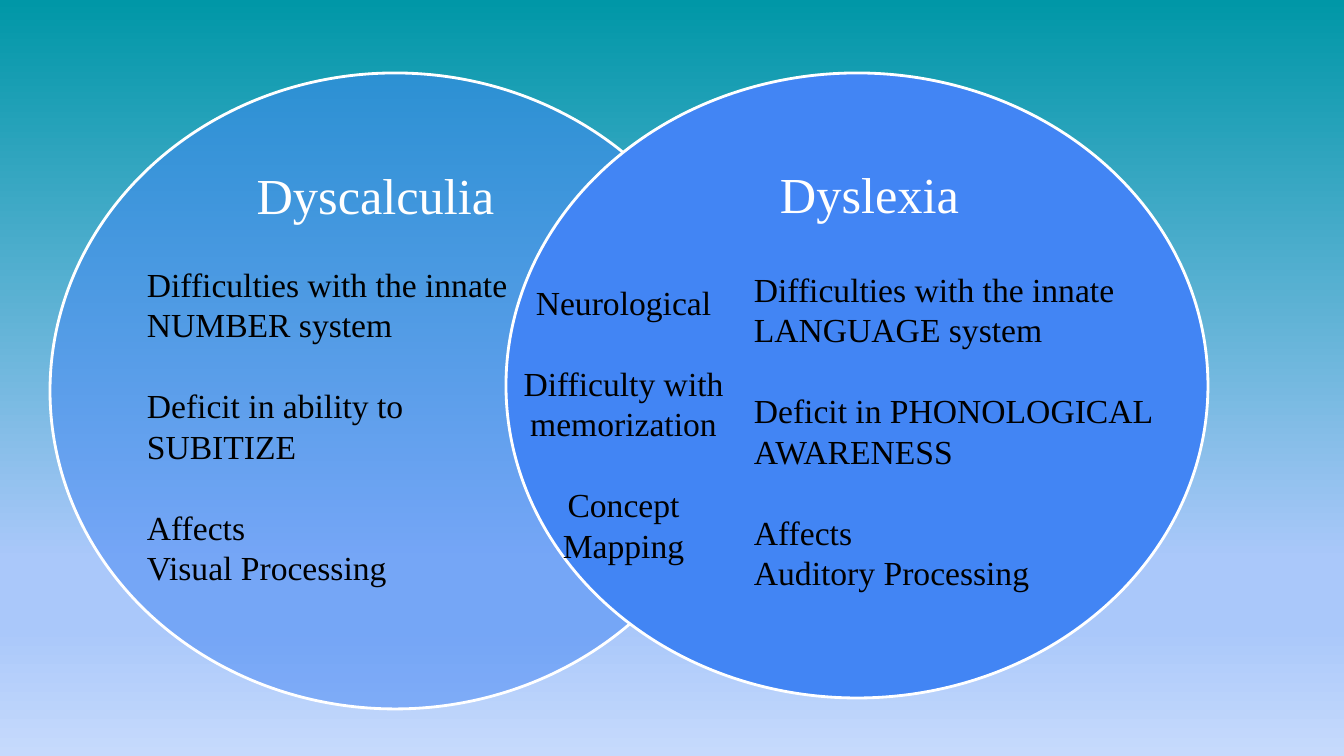
from copy import deepcopy

from pptx import Presentation
from pptx.dml.color import RGBColor
from pptx.enum.shapes import MSO_SHAPE
from pptx.enum.text import MSO_AUTO_SIZE, PP_ALIGN
from pptx.oxml.ns import qn
from pptx.util import Pt
from lxml import etree

ELLIPSE = MSO_SHAPE.OVAL
GROW = MSO_AUTO_SIZE.SHAPE_TO_FIT_TEXT
LEFT, CENTER = PP_ALIGN.LEFT, PP_ALIGN.CENTER

PX = 9144
SCALE = 914400 / 100.8
FONT = "Times New Roman"
WHITE, BLACK, BLUE = "FFFFFF", "000000", "4285F4"
LINE_GAP = 29

BACKGROUND = [(0, "0097A7"), (74, "AAC8FA"), (83, "AAC8FA"), (100, "C6DAFC")]
CIRCLES = [((50, 73, 690, 636), 50), ((506, 73, 702, 625), 100)]
HEADINGS = [
    ((245, 159, 261, 72), "Dyscalculia"),
    ((728, 158, 283, 72), "Dyslexia"),
]
LISTS = [
    ((513, 277, 221, 295), CENTER, [
        ["Neurological"],
        ["Difficulty with memorization"],
        ["Concept Mapping"],
    ]),
    ((137, 259, 399, 360), LEFT, [
        ["Difficulties with the innate NUMBER system"],
        ["Deficit in ability to SUBITIZE"],
        ["Affects", "Visual Processing"],
    ]),
    ((744, 264, 449, 336), LEFT, [
        ["Difficulties with the innate LANGUAGE system"],
        ["Deficit in PHONOLOGICAL AWARENESS"],
        ["Affects", "Auditory Processing"],
    ]),
]


def px(lengths):
    return [round(length * SCALE) for length in lengths]


def color(value):
    return RGBColor.from_string(value)


def paint_background(slide):
    fill = slide.background.fill
    fill.gradient()
    fill.gradient_angle = 270
    stop_list = next(slide.element.iter(qn("a:gsLst")))
    while len(stop_list) < len(BACKGROUND):
        stop_list.append(deepcopy(stop_list[0]))
    for stop, (percent, value) in zip(fill.gradient_stops, BACKGROUND):
        stop.position = percent / 100
        stop.color.rgb = color(value)


def add_circle(slide, place, opacity):
    circle = slide.shapes.add_shape(ELLIPSE, *px(place))
    circle.shadow.inherit = False
    circle.fill.solid()
    circle.fill.fore_color.rgb = color(BLUE)
    circle.line.color.rgb = color(WHITE)
    circle.line.width = Pt(2)
    if opacity < 100:
        shade = next(circle.element.spPr.iter(qn("a:srgbClr")))
        etree.SubElement(shade, qn("a:alpha"), val=str(opacity * 1000))


def add_text(slide, place, groups, size, value, alignment):
    box = slide.shapes.add_textbox(*px(place))
    frame = box.text_frame
    frame.word_wrap = True
    frame.auto_size = GROW
    lines = [(text, group > 0 and row == 0)
             for group, texts in enumerate(groups)
             for row, text in enumerate(texts)]
    for index, (text, spaced) in enumerate(lines):
        para = frame.add_paragraph() if index else frame.paragraphs[0]
        para.text = text
        para.alignment = alignment
        if spaced:
            para.space_before = Pt(LINE_GAP)
        para.font.name = FONT
        para.font.size = Pt(size)
        para.font.color.rgb = color(value)


def main():
    deck = Presentation()
    deck.slide_width, deck.slide_height = px((1344, 756))
    slide = deck.slides.add_slide(deck.slide_layouts[6])
    paint_background(slide)
    for place, opacity in CIRCLES:
        add_circle(slide, place, opacity)
    for place, heading in HEADINGS:
        add_text(slide, place, [[heading]], 36, WHITE, CENTER)
    for place, alignment, groups in LISTS:
        add_text(slide, place, groups, 24, BLACK, alignment)
    deck.save("out.pptx")


if __name__ == "__main__":
    main()
